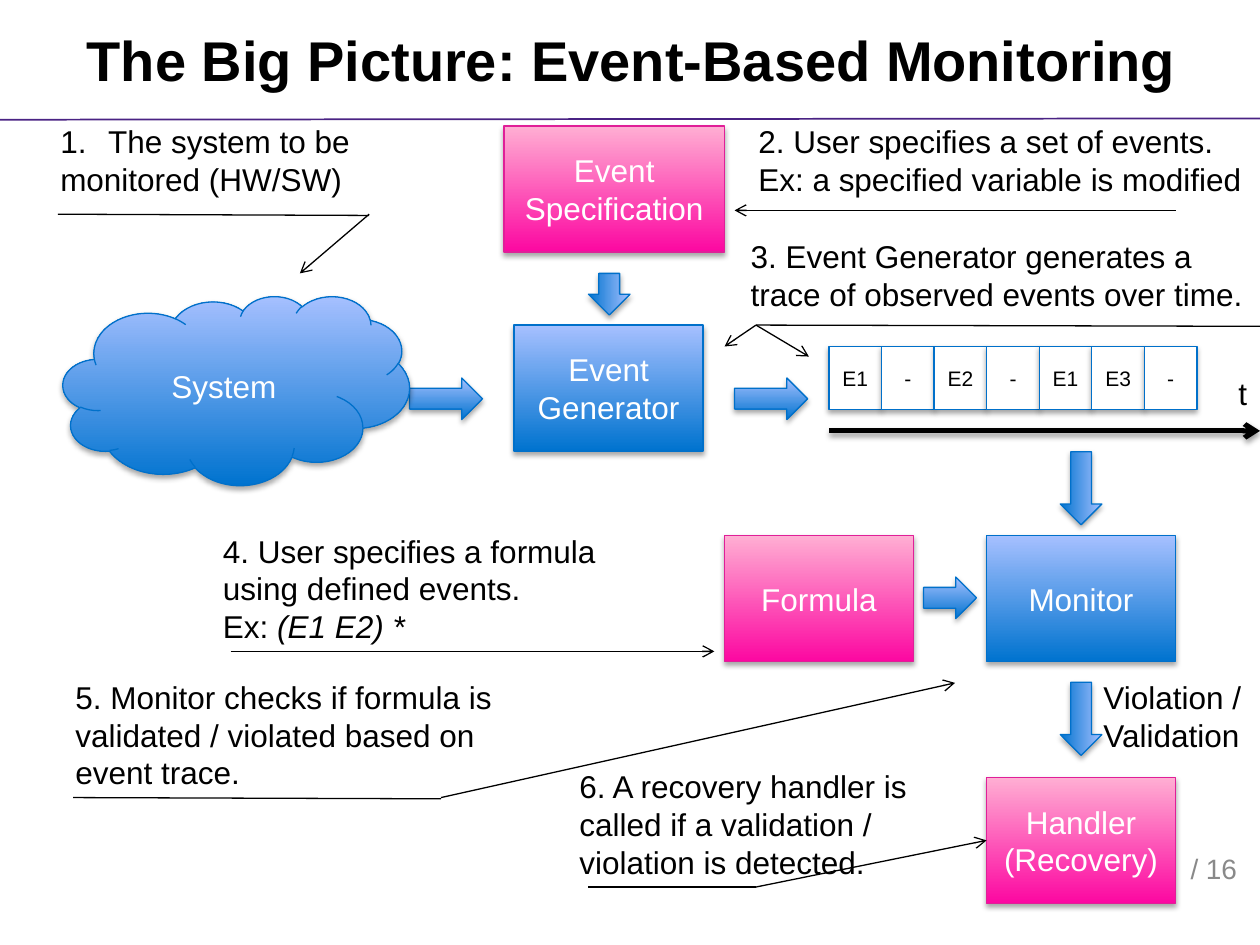
from pptx import Presentation
from pptx.dml.color import RGBColor
from pptx.enum.shapes import MSO_CONNECTOR, MSO_SHAPE as Preset
from pptx.enum.text import MSO_ANCHOR as Anchor, MSO_AUTO_SIZE as AutoSize, PP_ALIGN as Align
from pptx.oxml.ns import qn
from pptx.util import Inches, Pt
from lxml.etree import SubElement

BLUE = ("0073CF", "A6C0FF", "0070CA")  # bottom, top, outline
PINK = ("FC08A1", "FFAFD3", "E01F98")


def color(hex_string):
    return RGBColor.from_string(hex_string)


class Diagram:
    font_name = "Arial"
    body_size = 18

    def __init__(self, slide):
        self.slide = slide

    def format_text(self, text_frame, size, hex_color, align=None, bold=None):
        for paragraph in text_frame.paragraphs:
            paragraph.alignment = align
            for run in paragraph.runs:
                run.font.name = self.font_name
                run.font.size = Pt(size)
                run.font.bold = bold
                run.font.color.rgb = color(hex_color)

    def add_shadow(self, properties, alpha):
        effects = properties.find(qn("a:effectLst"))
        shadow = SubElement(effects, qn("a:outerShdw"), blurRad=str(Pt(3.1)),
                            dist=str(Pt(1.8)), dir="5400000", rotWithShape="0")
        black = SubElement(shadow, qn("a:srgbClr"), val="000000")
        SubElement(black, qn("a:alpha"), val=str(alpha * 1000))

    def title(self, text, left, top, width, height):
        title = self.slide.shapes.title
        title.left, title.top = Inches(left), Inches(top)
        title.width, title.height = Inches(width), Inches(height)
        title.text_frame.text = text
        title.text_frame.vertical_anchor = Anchor.MIDDLE
        self.format_text(title.text_frame, 32, "000000", Align.CENTER, True)

    def shape(self, preset, left, top, width, height, outline):
        shape = self.slide.shapes.add_shape(
            preset, Inches(left), Inches(top), Inches(width), Inches(height))
        shape.line.color.rgb = color(outline)
        shape.line.width = Pt(0.75)
        shape.shadow.inherit = False
        self.add_shadow(shape._element.spPr, 35)
        return shape

    def gradient_shape(self, preset, left, top, width, height, palette, text=""):
        bottom, upper, outline = palette
        shape = self.shape(preset, left, top, width, height, outline)
        shape.fill.gradient()
        shape.fill.gradient_angle = 90
        for stop, position, stop_color in zip(shape.fill.gradient_stops, (0, 1), (bottom, upper)):
            stop.position = position
            stop.color.rgb = color(stop_color)
        if text:
            shape.text_frame.text = text
            shape.text_frame.vertical_anchor = Anchor.MIDDLE
            self.format_text(shape.text_frame, self.body_size, "FFFFFF", Align.CENTER)
        return shape

    def box(self, text, left, top, palette, width=1.5):
        return self.gradient_shape(Preset.RECTANGLE, left, top, width, 1, palette, text)

    def block_arrow(self, left, top, length, rotation=0):
        arrow = self.gradient_shape(Preset.RIGHT_ARROW, left, top, length, 0.33, BLUE)
        arrow.rotation = rotation

    def event_cell(self, text, left, top, width, height):
        cell = self.shape(Preset.RECTANGLE, left, top, width, height, BLUE[2])
        cell.fill.solid()
        cell.fill.fore_color.rgb = color("FFFFFF")
        cell.text_frame.text = text
        cell.text_frame.vertical_anchor = Anchor.MIDDLE
        self.format_text(cell.text_frame, 12, "000000", Align.CENTER)

    def label(self, text, left, top, width, height, size=18, hex_color="000000"):
        label = self.slide.shapes.add_textbox(
            Inches(left), Inches(top), Inches(width), Inches(height))
        text_frame = label.text_frame
        text_frame.word_wrap = False
        text_frame.auto_size = AutoSize.SHAPE_TO_FIT_TEXT
        text_frame.text = text
        self.format_text(text_frame, size, hex_color)
        return text_frame

    def line(self, start, end, arrow=False, hex_color="000000", width=0.75, shadow=False):
        line = self.slide.shapes.add_connector(
            MSO_CONNECTOR.STRAIGHT, *(Inches(value) for value in (*start, *end)))
        line.line.color.rgb = color(hex_color)
        line.line.width = Pt(width)
        properties = line._element.spPr
        if arrow:
            SubElement(properties.find(qn("a:ln")), qn("a:tailEnd"), type="arrow")
        SubElement(properties, qn("a:effectLst"))
        if shadow:
            self.add_shadow(properties, 38)
        return line


def main():
    presentation = Presentation()
    presentation.slide_width, presentation.slide_height = Inches(10), Inches(7.5)
    diagram = Diagram(presentation.slides.add_slide(presentation.slide_layouts[5]))

    # Title, rule and page total
    diagram.line((0, 0.95), (10, 0.94), hex_color="4A2384", width=1)
    diagram.label("/ 16", 9.35, 6.71, 0.65, 0.37, 16, "898989")
    diagram.title("The Big Picture: Event-Based Monitoring", 0.33, 0, 9.37, 0.94)

    # Event trace over time
    diagram.box("Event Generator", 4.08, 2.58, BLUE)
    cell_width = 2.92 / 7
    for index, event in enumerate(("E1", "-", "E2", "-", "E1", "E3", "-")):
        diagram.event_cell(event, 6.58 + index * cell_width, 2.75, cell_width, 0.5)
    diagram.line((6.58, 3.42), (10, 3.42), arrow=True, width=2.83, shadow=True)
    diagram.label("t", 9.73, 2.92, 0.27, 0.4)

    # Block arrows between the stages
    for left, top, length, rotation in (
        (3.25, 3, 0.58, 0), (5.83, 3, 0.58, 0), (7.33, 4.58, 0.42, 0),
        (8.29, 3.71, 0.58, 90), (8.29, 5.54, 0.58, 90), (4.67, 2.17, 0.33, 90),
    ):
        diagram.block_arrow(left, top, length, rotation)

    # Stages
    diagram.box("Monitor", 7.83, 4.25, BLUE)
    handler = diagram.box("Handler (Recovery)", 7.83, 6.17, PINK)
    diagram.box("Event Specification", 4, 1, PINK, width=1.75)
    diagram.box("Formula", 5.75, 4.25, PINK)
    diagram.gradient_shape(Preset.CLOUD, 0.5, 2.35, 2.75, 1.5, BLUE, "System")
    diagram.label("Violation /\nValidation", 8.66, 5.33, 1.34, 0.71)

    # Step notes
    system_note = diagram.label(
        "The system to be\nmonitored (HW/SW)", 0.38, 0.92, 2.65, 0.71)
    numbering = system_note.paragraphs[0]._p.get_or_add_pPr()
    numbering.set("marL", str(Inches(0.38)))
    numbering.set("indent", str(Inches(-0.38)))
    SubElement(numbering, qn("a:buAutoNum"), type="arabicPeriod")

    diagram.label("2. User specifies a set of events.\nEx: a specified variable is modified",
                  5.92, 0.92, 4.12, 0.71)
    diagram.label("3. Event Generator generates a\ntrace of observed events over time.",
                  5.86, 1.83, 4.14, 0.71)
    formula_note = diagram.label("4. User specifies a formula\nusing defined events.\nEx: ",
                                 1.67, 4.17, 3.19, 1.01)
    formula = formula_note.paragraphs[-1].add_run()
    formula.text = "(E1 E2) *"
    diagram.format_text(formula_note, diagram.body_size, "000000")
    formula.font.italic = True
    diagram.label("5. Monitor checks if formula is\nvalidated / violated based on\nevent trace.",
                  0.5, 5.33, 3.55, 1.01)
    diagram.label("6. A recovery handler is\ncalled if a validation /\nviolation is detected.",
                  4.5, 6.04, 2.84, 1.01)

    # Note underlines and pointers
    for start, end, arrow in (
        ((0.46, 1.7), (2.93, 1.71), False), ((2.93, 1.7), (2.38, 2.17), True),
        ((9.33, 1.67), (5.83, 1.67), True),
        ((10, 2.59), (6, 2.58), False),
        ((6, 2.58), (6.42, 2.83), True), ((6, 2.58), (5.75, 2.75), True),
        ((1.83, 5.17), (5.67, 5.17), True),
        ((3.5, 6.34), (0.58, 6.33), False), ((3.5, 6.33), (7.58, 5.42), True),
        ((4.67, 7.04), (6, 7.04), False),
    ):
        diagram.line(start, end, arrow)
    diagram.line((6, 7.04), (7.83, 6.67), arrow=True).end_connect(handler, 1)

    presentation.save("out.pptx")


if __name__ == "__main__":
    main()
